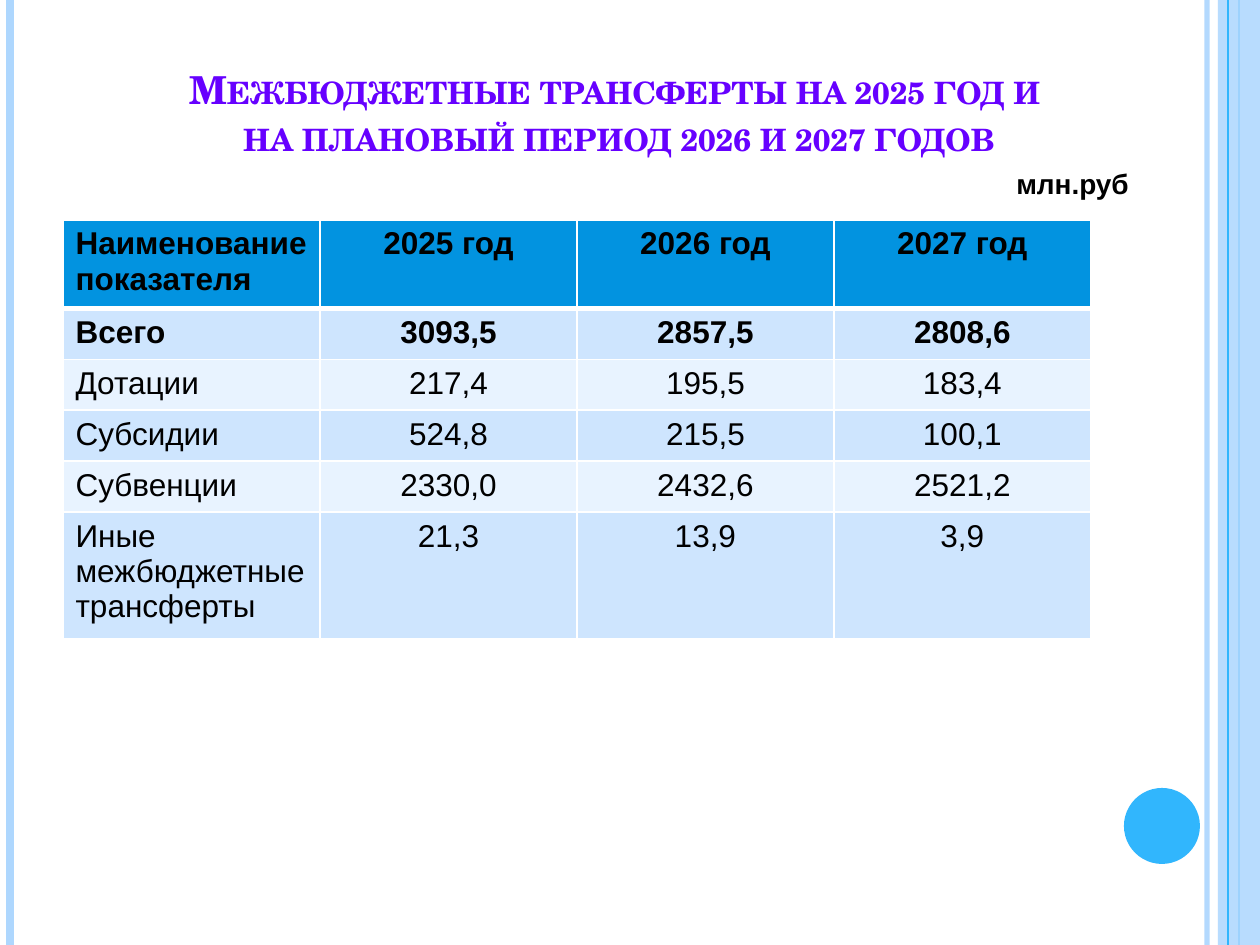
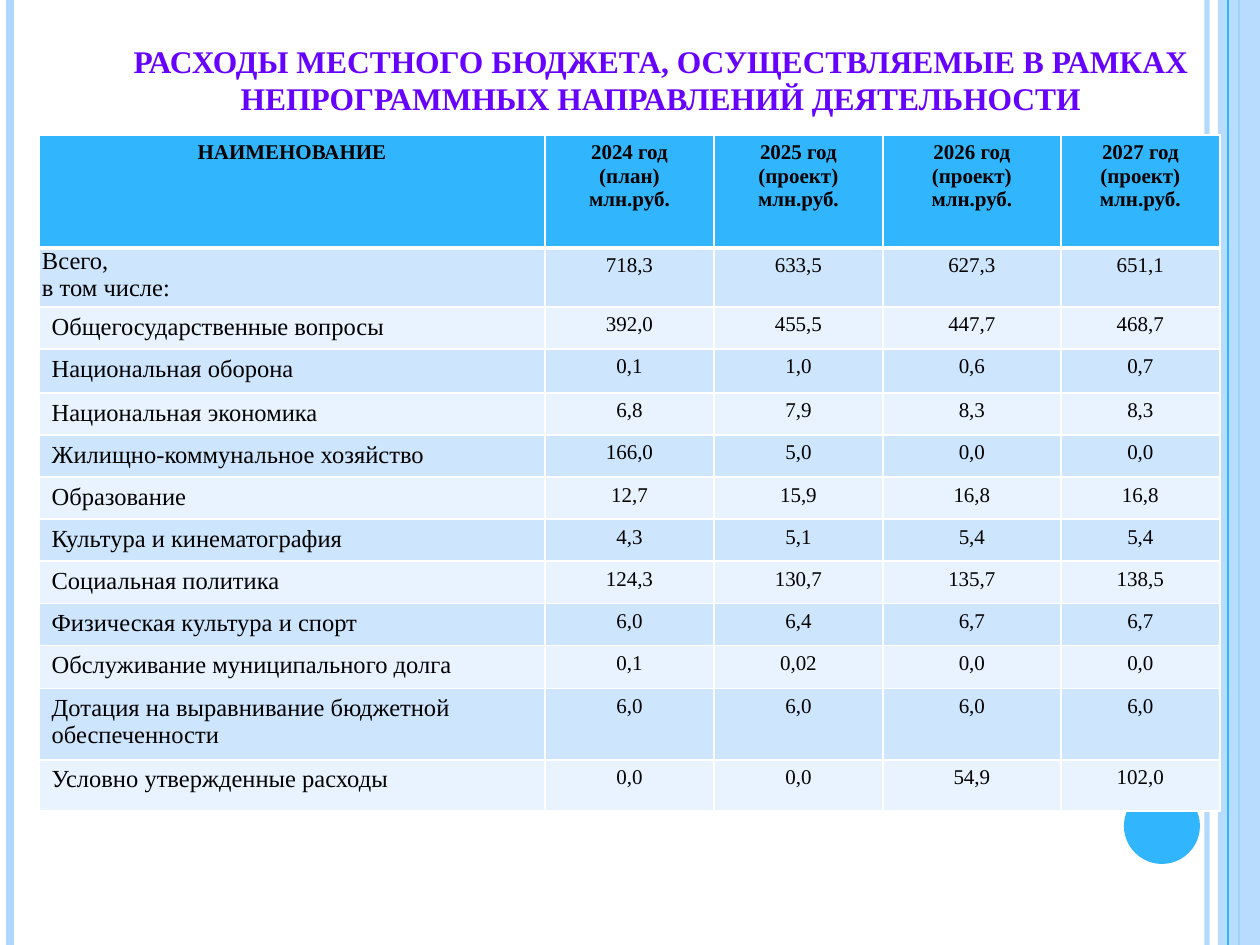
from lxml import etree
from pptx import Presentation
from pptx.dml.color import RGBColor
from pptx.enum.shapes import MSO_CONNECTOR, MSO_SHAPE
from pptx.enum.text import MSO_ANCHOR, PP_ALIGN
from pptx.oxml.ns import qn
from pptx.util import Emu, Pt

LEFT, MID = PP_ALIGN.LEFT, PP_ALIGN.CENTER
TOP, CENTER, BOTTOM = MSO_ANCHOR.TOP, MSO_ANCHOR.MIDDLE, MSO_ANCHOR.BOTTOM
RECT, OVAL = MSO_SHAPE.RECTANGLE, MSO_SHAPE.OVAL
STRAIGHT = MSO_CONNECTOR.STRAIGHT

WIDE, HIGH = 1260, 945
COLORS = {
    "pale": "AED7FE", "sky": "31B6FD", "blue": "0293E0", "title": "6600FF",
    "odd": "CEE5FE", "even": "E8F3FF", "white": "FFFFFF", "black": "000000",
}
SANS, SERIF, SCHOOL = "Arial", "Times New Roman", "TeX Gyre Schola"

GRANTS = [
    ["Наименование показателя", "2025 год", "2026 год", "2027 год"],
    ["Всего", "3093,5", "2857,5", "2808,6"],
    ["Дотации", "217,4", "195,5", "183,4"],
    ["Субсидии", "524,8", "215,5", "100,1"],
    ["Субвенции", "2330,0", "2432,6", "2521,2"],
    ["Иные межбюджетные трансферты", "21,3", "13,9", "3,9"],
]
COSTS = [
    ["НАИМЕНОВАНИЕ", "2024 год\n(план)\nмлн.руб."]
    + [f"{year} год\n(проект)\nмлн.руб." for year in (2025, 2026, 2027)],
    ["Всего,\nв том числе:", "718,3", "633,5", "627,3", "651,1"],
    ["Общегосударственные вопросы", "392,0", "455,5", "447,7", "468,7"],
    ["Национальная оборона", "0,1", "1,0", "0,6", "0,7"],
    ["Национальная экономика", "6,8", "7,9", "8,3", "8,3"],
    ["Жилищно-коммунальное хозяйство", "166,0", "5,0", "0,0", "0,0"],
    ["Образование", "12,7", "15,9", "16,8", "16,8"],
    ["Культура и кинематография", "4,3", "5,1", "5,4", "5,4"],
    ["Социальная политика", "124,3", "130,7", "135,7", "138,5"],
    ["Физическая культура и спорт", "6,0", "6,4", "6,7", "6,7"],
    ["Обслуживание муниципального долга", "0,1", "0,02", "0,0", "0,0"],
    ["Дотация на выравнивание бюджетной обеспеченности",
     "6,0", "6,0", "6,0", "6,0"],
    ["Условно утвержденные расходы", "0,0", "0,0", "54,9", "102,0"],
]


def px(n):
    return Emu(round(n * 914400 / 126))


def tint(name):
    return RGBColor.from_string(COLORS[name])


def fade(shape, share):
    for node in shape._element.iter(qn("a:srgbClr")):
        etree.SubElement(node, qn("a:alpha")).set("val", str(share * 1000))


def add_run(par, text, font, size, color, bold):
    run = par.add_run()
    run.text = text
    run.font.name, run.font.size, run.font.bold = font, Pt(size), bold
    run.font.color.rgb = tint(color)
    return run


def add_text(slide, box, lines, font, size, color, align, anchor):
    """Bold text box; its lines are parted by line breaks."""
    frame = slide.shapes.add_textbox(*map(px, box)).text_frame
    frame.word_wrap = True
    frame.vertical_anchor = anchor
    par = frame.paragraphs[0]
    par.alignment = align
    runs = []
    for i, line in enumerate(lines):
        if i:
            par.add_line_break()
        runs.append(add_run(par, line, font, size, color, True))
    return runs


def add_rule(slide, x, color, width):
    rule = slide.shapes.add_connector(STRAIGHT, px(x), 0, px(x), px(HIGH))
    rule.line.color.rgb = tint(color)
    rule.line.width = Pt(width)
    etree.SubElement(rule._element.spPr, qn("a:effectLst"))
    return rule


def add_plain(slide, kind, box, color):
    shape = slide.shapes.add_shape(kind, *map(px, box))
    shape.shadow.inherit = False
    shape.fill.solid()
    shape.fill.fore_color.rgb = tint(color)
    shape.line.fill.background()
    return shape


def add_frame(slide):
    """Side rules, right band and disc on every slide."""
    fade(add_rule(slide, 1207, "pale", 3), 93)
    add_rule(slide, 10, "pale", 4.5)
    add_rule(slide, 1239, "sky", 1.5)
    fade(add_plain(slide, RECT, (1218, 0, WIDE - 1218, HIGH), "pale"), 87)
    add_rule(slide, 1228, "sky", 0.75)
    add_plain(slide, OVAL, (1124, 788, 76, 76), "sky")


def add_edges(cell, row):
    """White borders, thick below the header row."""
    props = cell._tc.get_or_add_tcPr()
    thick = {(0, "lnB"), (1, "lnT")}
    for side in ("lnL", "lnR", "lnT", "lnB"):
        width = Pt(3 if (row, side) in thick else 1)
        edge = etree.SubElement(props, qn(f"a:{side}"), w=str(width))
        fill = etree.SubElement(edge, qn("a:solidFill"))
        etree.SubElement(fill, qn("a:srgbClr"), val=COLORS["white"])


def add_grid(slide, spot, cols, rows, data, head, style):
    """Banded table; style(row, col) gives font, size, bold and alignment."""
    box = (*spot, sum(cols), sum(rows))
    table = slide.shapes.add_table(len(rows), len(cols), *map(px, box)).table
    table.first_row = table.horz_banding = False
    for col, width in zip(table.columns, cols):
        col.width = px(width)
    for r, (height, texts) in enumerate(zip(rows, data)):
        table.rows[r].height = px(height)
        band = ("odd" if r % 2 else "even") if r else head
        for c, text in enumerate(texts):
            cell = table.cell(r, c)
            add_edges(cell, r)
            cell.fill.solid()
            cell.fill.fore_color.rgb = tint(band)
            font, size, bold, align = style(r, c)
            for i, line in enumerate(text.split("\n")):
                frame = cell.text_frame
                par = frame.add_paragraph() if i else frame.paragraphs[0]
                par.alignment = align
                add_run(par, line, font, size, "black", bold)
    return table


def add_grants(slide):
    """Transfers slide."""
    add_frame(slide)
    lines = ["Межбюджетные трансферты на 2025 год и ",
             "на плановый период 2026 и 2027 годов"]
    box = (52, 35, 1134, 130)
    for run in add_text(slide, box, lines, SCHOOL, 22, "title", MID, BOTTOM):
        run.font._element.set("cap", "small")

    def style(r, c):
        return SANS, 18, r < 2, MID if c else LEFT

    add_grid(slide, (63, 220), [257] * 4, [88] + [51] * 4 + [126],
             GRANTS, "blue", style)
    add_text(slide, (1004, 160, 179, 48), ["млн.руб"],
             SANS, 16, "black", LEFT, TOP)


def add_costs(slide):
    """Spending slide."""
    add_frame(slide)
    title = ("РАСХОДЫ МЕСТНОГО БЮДЖЕТА, ОСУЩЕСТВЛЯЕМЫЕ В РАМКАХ "
             "НЕПРОГРАММНЫХ НАПРАВЛЕНИЙ ДЕЯТЕЛЬНОСТИ")
    add_text(slide, (58, 35, 1206, 89), [title],
             SERIF, 18, "title", MID, CENTER)

    def style(r, c):
        label = r > 0 and c == 0
        return SERIF, 14 if label else 12, r == 0, LEFT if label else MID

    rows = [113, 59, 42, 44] + [42] * 6 + [43, 71, 51]
    table = add_grid(slide, (39, 135), [506, 169, 169, 178, 159], rows,
                     COSTS, "sky", style)
    total = table.cell(1, 0)
    total.margin_left = total.margin_right = px(3)
    total.margin_top = total.margin_bottom = 0


def main():
    deck = Presentation()
    deck.slide_width, deck.slide_height = px(WIDE), px(HIGH)
    for build in (add_grants, add_costs):
        build(deck.slides.add_slide(deck.slide_layouts[6]))
    deck.save("out.pptx")


if __name__ == "__main__":
    main()
